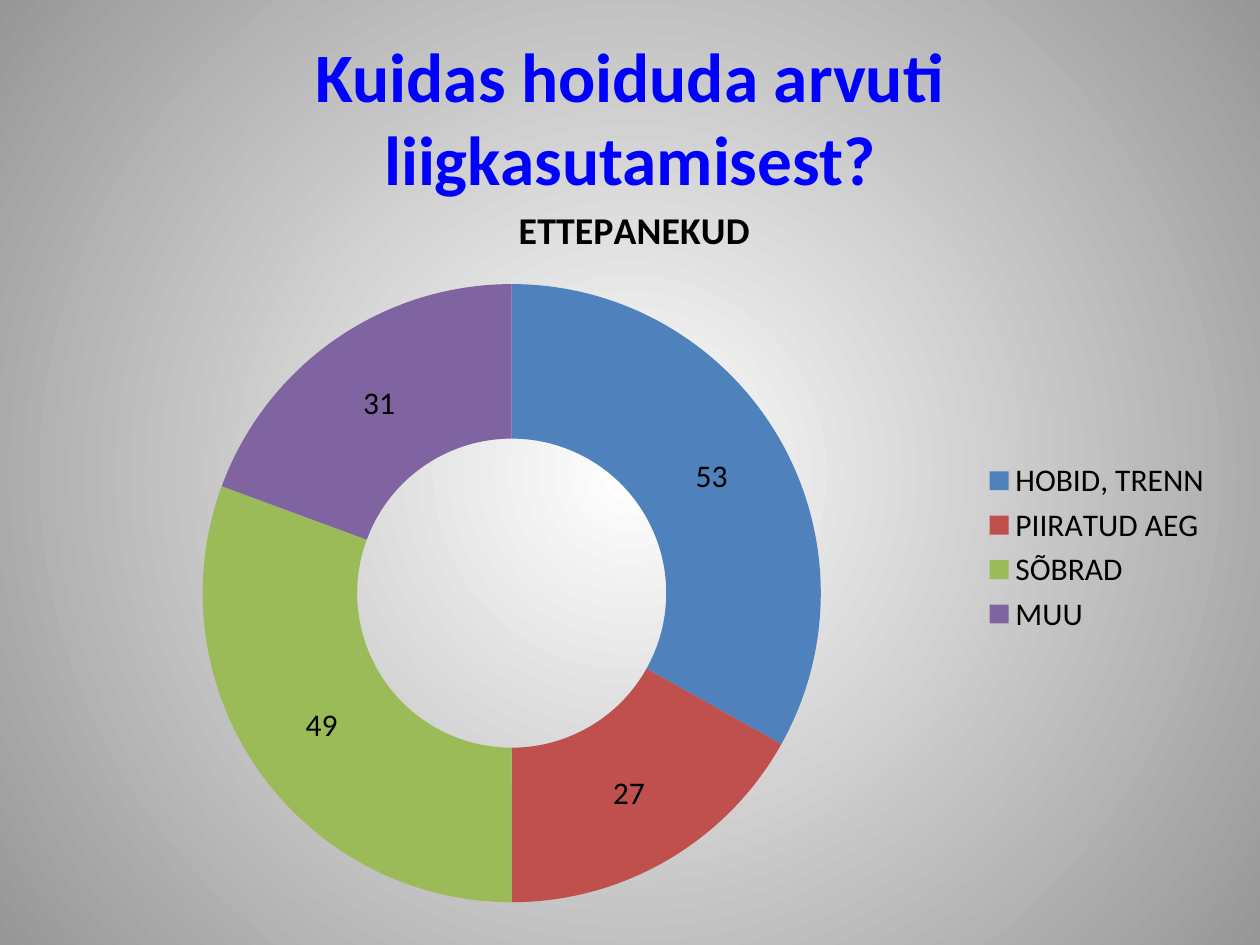
from pptx import Presentation, util as u
from pptx.chart.data import CategoryChartData
from pptx.dml.color import RGBColor
from pptx.enum import chart as ch, text
from pptx.oxml import parse_xml
from pptx.oxml.ns import nsdecls, qn

HEADING = "Kuidas hoiduda arvuti liigkasutamisest?"
CHART_TITLE = "ETTEPANEKUD"
# suggestion, number of answers, ring colour
SUGGESTIONS = [
    ("HOBID, TRENN", 53, "4F81BD"),
    ("PIIRATUD AEG", 27, "C0504D"),
    ("SÕBRAD", 49, "9BBB59"),
    ("MUU", 31, "8064A2"),
]

THEME = {
    "font": "Calibri",
    "heading": {"size": 39.6, "color": "0000FF", "bold": True},
    "chart_title": {"size": 21.6, "color": "000000", "bold": True},
    "chart_text": {"size": 18, "color": "000000", "bold": False},
    "background": ("FFFFFF", "979797"),
}

SLIDE_SIZE = u.Cm(25.4), u.Cm(19.05)
HEADING_BOX = u.Cm(1.27), u.Cm(0.76), u.Cm(22.86), u.Cm(3.18)
CHART_BOX = u.Cm(0.89), u.Cm(3.53), u.Cm(23.8), u.Cm(15.01)


def style_font(font, role):
    look = THEME[role]
    font.name = THEME["font"]
    font.size = u.Pt(look["size"])
    font.bold = look["bold"]
    font.color.rgb = RGBColor.from_string(look["color"])


def add_run(paragraph, words, role):
    run = paragraph.add_run()
    run.text = words
    style_font(run.font, role)


def paint_background(slide):
    """Fill the slide with a circular gradient spreading from its centre."""
    fill = slide.background.fill
    fill.gradient()
    for stop, color in zip(fill.gradient_stops, THEME["background"]):
        stop.color.rgb = RGBColor.from_string(color)
    for stop, position in zip(fill.gradient_stops, (0, 1)):
        stop.position = position
    linear = next(slide.element.iter(qn("a:lin")))
    circle = parse_xml(
        f'<a:path {nsdecls("a")} path="circle">'
        '<a:fillToRect l="50000" t="50000" r="50000" b="50000"/></a:path>')
    linear.getparent().replace(linear, circle)


def add_heading(slide):
    frame = slide.shapes.add_textbox(*HEADING_BOX).text_frame
    frame.word_wrap = True
    frame.vertical_anchor = text.MSO_ANCHOR.MIDDLE
    line = frame.paragraphs[0]
    line.alignment = text.PP_ALIGN.CENTER
    add_run(line, HEADING, "heading")


def add_suggestions_chart(slide):
    names, counts, colors = zip(*SUGGESTIONS)
    answers = CategoryChartData()
    answers.categories = names
    answers.add_series(CHART_TITLE, counts)
    chart = slide.shapes.add_chart(
        ch.XL_CHART_TYPE.DOUGHNUT, *CHART_BOX, answers).chart
    style_font(chart.font, "chart_text")

    chart.has_title = True
    add_run(chart.chart_title.text_frame.paragraphs[0], CHART_TITLE, "chart_title")
    chart.chart_title.include_in_layout = False

    chart.has_legend = True
    chart.legend.position = ch.XL_LEGEND_POSITION.RIGHT
    chart.legend.include_in_layout = False
    style_font(chart.legend.font, "chart_text")

    ring = chart.plots[0]
    ring.vary_by_categories = True
    ring.has_data_labels = True
    ring.data_labels.show_value = True
    ring.data_labels.show_percentage = False
    style_font(ring.data_labels.font, "chart_text")
    for index, color in enumerate(colors):
        fill = ring.series[0].points[index].format.fill
        fill.solid()
        fill.fore_color.rgb = RGBColor.from_string(color)


def main():
    deck = Presentation()
    deck.slide_width, deck.slide_height = SLIDE_SIZE
    slide = deck.slides.add_slide(deck.slide_layouts[6])
    paint_background(slide)
    add_heading(slide)
    add_suggestions_chart(slide)
    deck.save("out.pptx")


if __name__ == "__main__":
    main()
